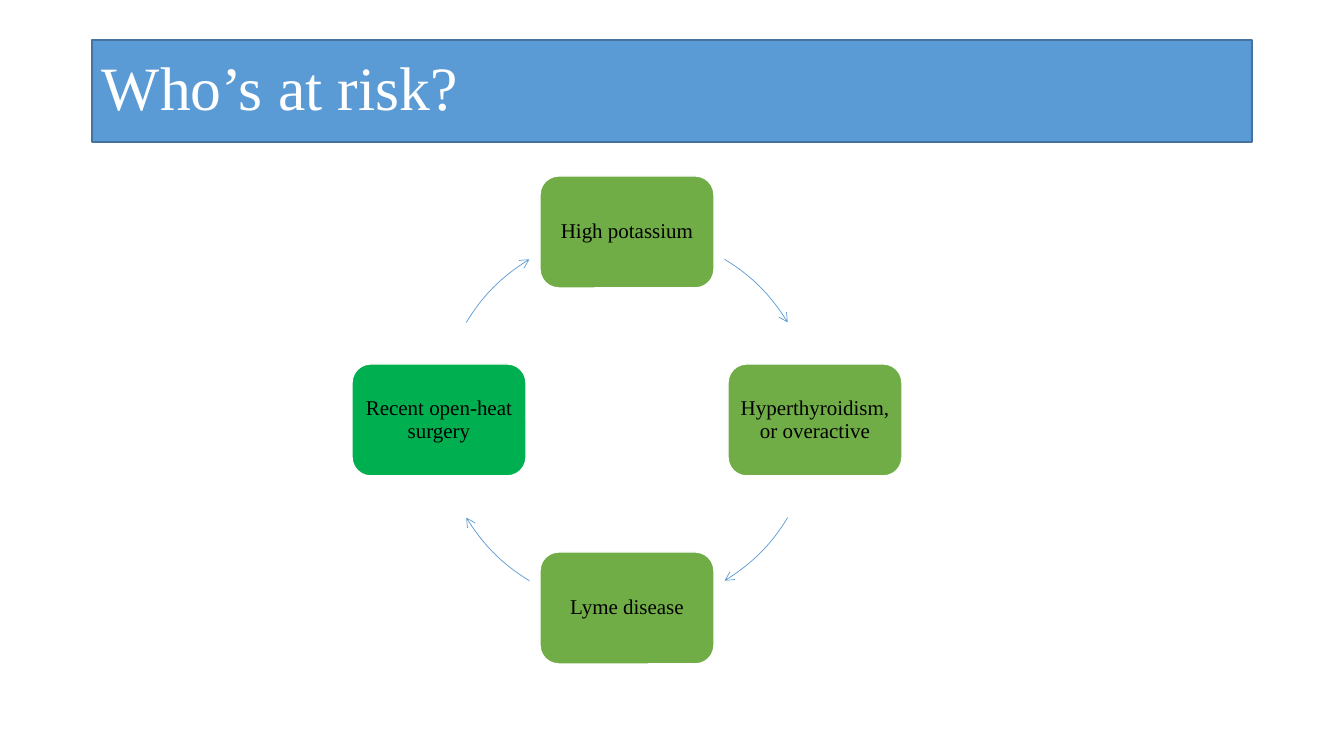
from math import cos, radians, sin

from lxml.etree import SubElement
from pptx import Presentation
from pptx.dml.color import RGBColor
from pptx.enum.shapes import MSO_SHAPE
from pptx.enum.text import MSO_ANCHOR, MSO_AUTO_SIZE, PP_ALIGN
from pptx.oxml.ns import qn
from pptx.util import Emu, Pt

EMU_PER_PX = 914400 / 100.8
FONT = "Times New Roman"
WHITE = RGBColor(0xFF, 0xFF, 0xFF)
BLACK = RGBColor(0x00, 0x00, 0x00)
BLUE = RGBColor(0x5B, 0x9B, 0xD5)
DARK_BLUE = RGBColor(0x43, 0x73, 0x9E)
OLIVE = RGBColor(0x70, 0xAD, 0x47)
GREEN = RGBColor(0x00, 0xB0, 0x50)

NODE_WIDTH, NODE_HEIGHT = 174, 112
ARC_HALF_SWEEP = 13.75
RISKS = [
    ("High potassium", OLIVE),
    ("Hyperthyroidism, or overactive", OLIVE),
    ("Lyme disease", OLIVE),
    ("Recent open-heat surgery", GREEN),
]


def px(length):
    """Convert pixels to EMU."""
    return Emu(round(length * EMU_PER_PX))


def paint(part, fill, line, weight):
    """Give a shape its fill and outline."""
    part.fill.solid()
    part.fill.fore_color.rgb = fill
    part.line.color.rgb = line
    part.line.width = Pt(weight)


def write(part, text, *, size, color, align=PP_ALIGN.LEFT, inset=10):
    """Put one formatted, vertically centred paragraph in a shape."""
    frame = part.text_frame
    frame.word_wrap = True
    frame.auto_size = MSO_AUTO_SIZE.NONE
    frame.vertical_anchor = MSO_ANCHOR.MIDDLE
    frame.margin_left = frame.margin_right = px(inset)
    frame.margin_top = frame.margin_bottom = px(min(inset, 5))
    paragraph = frame.paragraphs[0]
    paragraph.alignment = align
    paragraph.line_spacing = 0.9
    run = paragraph.add_run()
    run.text = text
    run.font.name = FONT
    run.font.size = Pt(size)
    run.font.color.rgb = color


def add_heading(slide, text, left, top, width, height):
    """Place the title banner."""
    heading = slide.shapes.title
    heading.left, heading.top = px(left), px(top)
    heading.width, heading.height = px(width), px(height)
    paint(heading, BLUE, DARK_BLUE, 1)
    write(heading, text, size=44, color=WHITE)


def add_risk(slide, text, fill, center_x, center_y):
    """Place one risk box around its centre."""
    risk = slide.shapes.add_shape(
        MSO_SHAPE.ROUNDED_RECTANGLE,
        px(center_x - NODE_WIDTH / 2), px(center_y - NODE_HEIGHT / 2),
        px(NODE_WIDTH), px(NODE_HEIGHT))
    risk.shadow.inherit = False
    paint(risk, fill, WHITE, 1)
    write(risk, text, size=15, color=BLACK, align=PP_ALIGN.CENTER, inset=6)


def add_cycle_arrow(slide, left, top, diameter, middle_angle):
    """Draw a clockwise arc arrow on the circle in the given box."""
    arrow = slide.shapes.add_shape(
        MSO_SHAPE.ARC, px(left), px(top), px(diameter), px(diameter))
    arrow.shadow.inherit = False
    arrow.fill.background()
    arrow.line.color.rgb = BLUE
    arrow.line.width = Pt(0.5)
    for index, angle in enumerate(
            (middle_angle - ARC_HALF_SWEEP, middle_angle + ARC_HALF_SWEEP)):
        arrow.adjustments[index] = angle % 360 * 0.6
    SubElement(arrow.line._get_or_add_ln(), qn("a:tailEnd"), type="arrow")


def add_cycle(slide, risks, left, top, diameter):
    """Space the risks evenly round a circle, with arrows between them."""
    radius = diameter / 2
    step = 360 / len(risks)
    for index, (text, fill) in enumerate(risks):
        angle = index * step - 90
        add_risk(slide, text, fill,
                 left + radius + radius * cos(radians(angle)),
                 top + radius + radius * sin(radians(angle)))
        add_cycle_arrow(slide, left, top, diameter, angle + step / 2)


def main():
    """Build and save the slide."""
    deck = Presentation()
    deck.slide_width, deck.slide_height = px(1344), px(756)
    slide = deck.slides.add_slide(deck.slide_layouts[5])
    add_heading(slide, "Who’s at risk?", 92, 40, 1160, 102)
    add_cycle(slide, RISKS, 439, 232, 376)
    deck.save("out.pptx")


if __name__ == "__main__":
    main()
